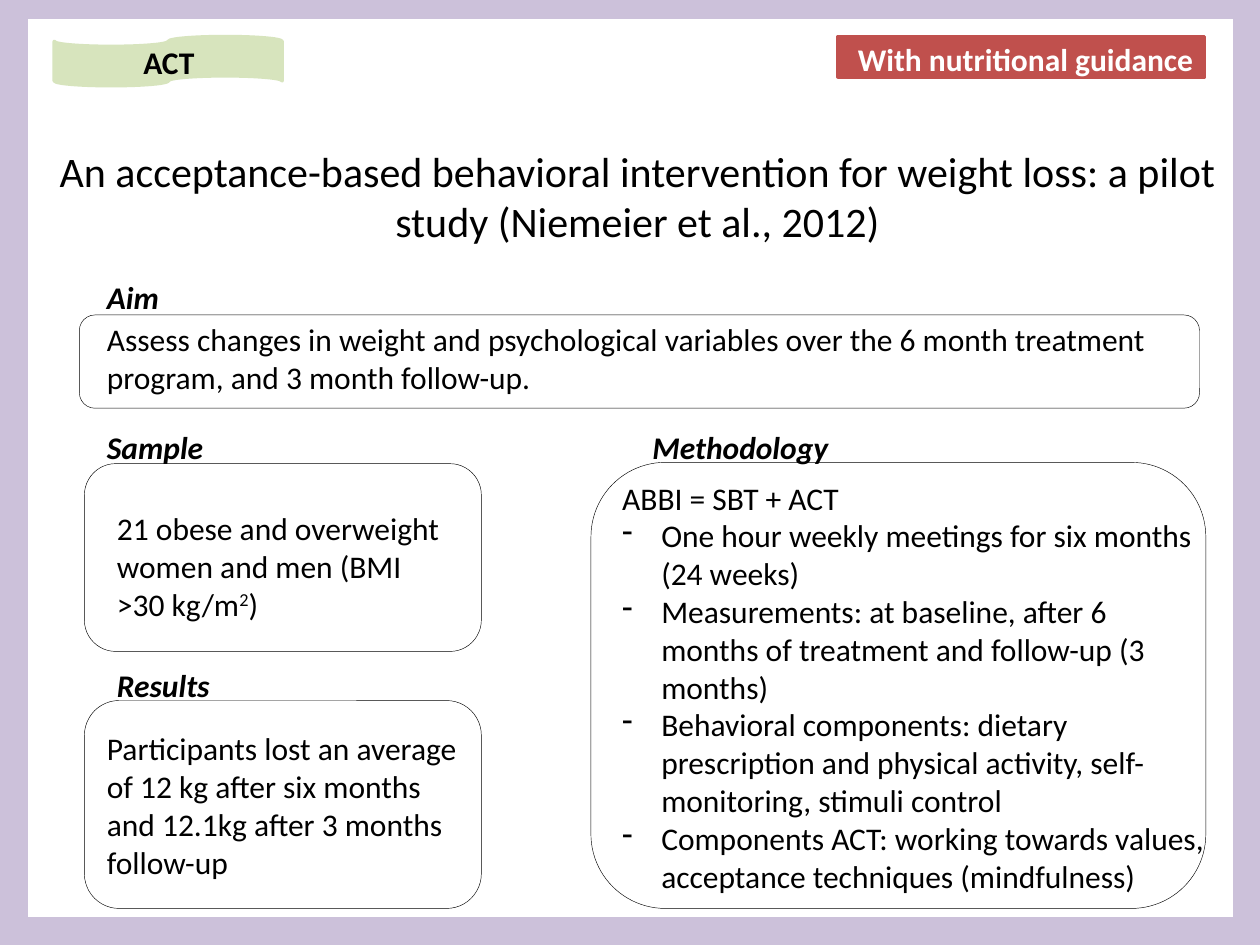
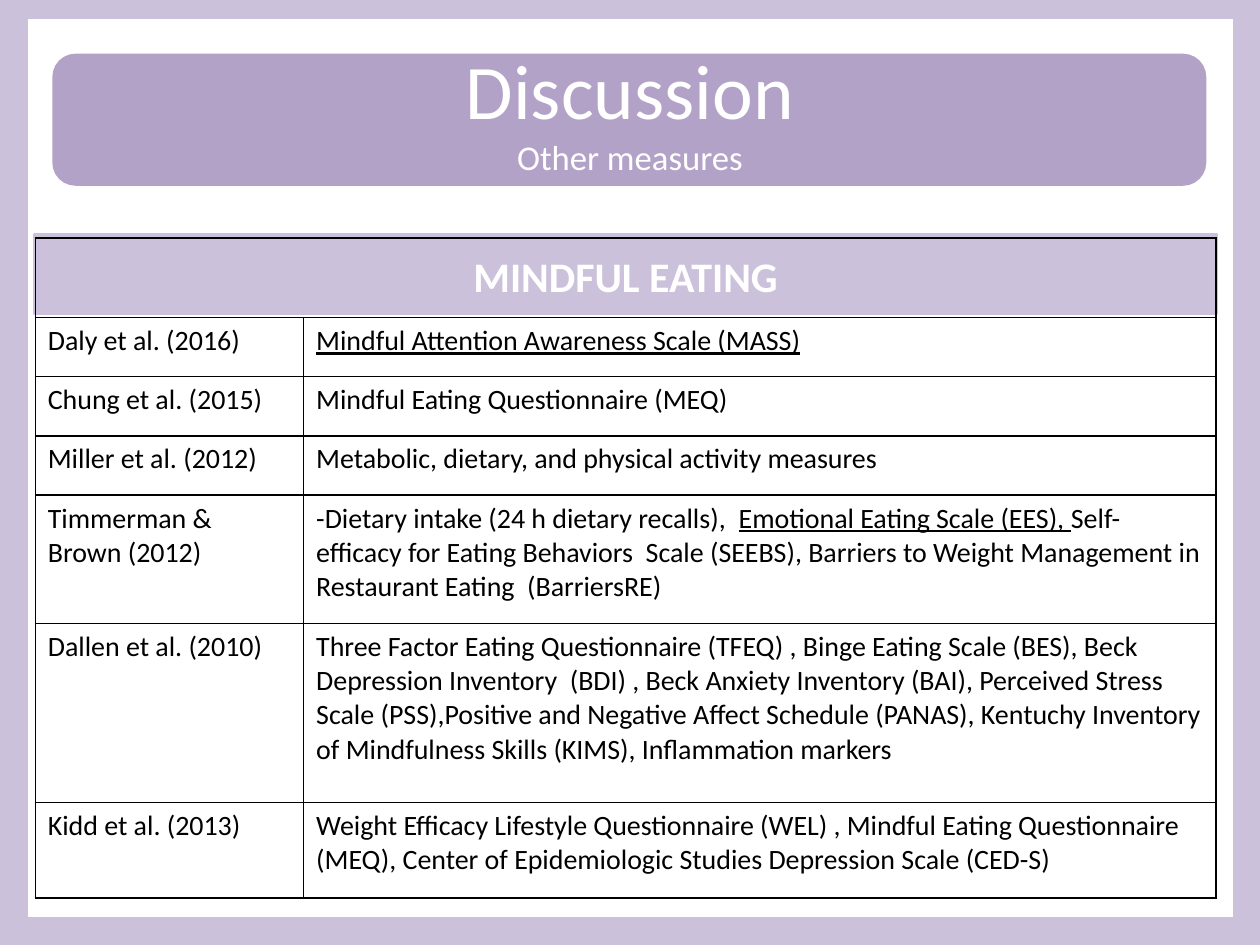
"""Build two slides on an acceptance-based weight loss study and its measures."""
from lxml import etree
from pptx import Presentation
from pptx.dml.color import RGBColor
from pptx.enum.shapes import MSO_SHAPE
from pptx.enum.text import MSO_ANCHOR, PP_ALIGN
from pptx.oxml.ns import qn
from pptx.util import Inches, Pt

BLACK = RGBColor(0x00, 0x00, 0x00)
WHITE = RGBColor(0xFF, 0xFF, 0xFF)
RED = RGBColor(0xC0, 0x50, 0x4D)
GREEN = RGBColor(0xD7, 0xE4, 0xBD)
LILAC = RGBColor(0xCC, 0xC1, 0xDA)
PURPLE = RGBColor(0xB3, 0xA2, 0xC7)
RECTANGLE = MSO_SHAPE.RECTANGLE
ROUNDED = MSO_SHAPE.ROUNDED_RECTANGLE
TAPE = MSO_SHAPE.FLOWCHART_PUNCHED_TAPE
FRAME = MSO_SHAPE.FRAME
LEFT, CENTER = PP_ALIGN.LEFT, PP_ALIGN.CENTER
TOP, MIDDLE = MSO_ANCHOR.TOP, MSO_ANCHOR.MIDDLE
FONT = "Calibri"
FRAME_BOX = (-0.98, -1.05, 11.97, 9.53)


def add_panel(slide, kind, box, color=None):
    """Add a filled shape, or a hairline outline when no colour is given."""
    shape = slide.shapes.add_shape(kind, *map(Inches, box))
    shape.shadow.inherit = False
    if color is None:
        shape.fill.background()
    else:
        shape.fill.solid()
        shape.fill.fore_color.rgb = color
    shape.line.color.rgb = BLACK if color is None else color
    shape.line.width = Pt(0.25 if color is None else 2)


def write_run(paragraph, text, size=18, color=BLACK, bold=False, italic=False, underline=False):
    """Add one formatted run to a paragraph and return it."""
    run = paragraph.add_run()
    run.text = text
    font = run.font
    font.name, font.size, font.color.rgb = FONT, Pt(size), color
    font.bold, font.italic, font.underline = bold, italic, underline
    return run


presentation = Presentation()
presentation.slide_width = Inches(10)
presentation.slide_height = Inches(7.5)
blank_layout = presentation.slide_layouts[6]

study_slide = presentation.slides.add_slide(blank_layout)
add_panel(study_slide, RECTANGLE, (6.65, 0.29, 2.91, 0.32), RED)
add_panel(study_slide, TAPE, (0.43, 0.29, 1.81, 0.39), GREEN)
add_panel(study_slide, FRAME, FRAME_BOX, LILAC)
for box in [
    (0.67, 3.68, 3.15, 1.49),
    (0.67, 5.56, 3.15, 1.65),
    (4.69, 3.67, 4.88, 3.54),
    (0.63, 2.5, 8.89, 0.74),
]:
    add_panel(study_slide, ROUNDED, box)

discussion_slide = presentation.slides.add_slide(blank_layout)
add_panel(discussion_slide, ROUNDED, (0.43, 0.44, 9.13, 1.02), PURPLE)
add_panel(discussion_slide, FRAME, FRAME_BOX, LILAC)
add_panel(discussion_slide, RECTANGLE, (0.28, 1.86, 9.37, 0.63), LILAC)

heading = {"bold": True, "italic": True}
texts = [
    (study_slide, (6.37, 0.27, 3.54, 0.4), CENTER, TOP,
     [("With nutritional guidance", {"bold": True, "color": WHITE})]),
    (study_slide, (-0.43, 0.29, 3.54, 0.4), CENTER, TOP, [("ACT", {"bold": True})]),
    (study_slide, (0.2, 0.93, 9.72, 1.25), CENTER, MIDDLE,
     [("An acceptance-based behavioral intervention for weight loss: a pilot study "
       "(Niemeier et al., 2012)", {"size": 24})]),
    (study_slide, (0.75, 2.16, 1.57, 0.4), LEFT, TOP, [("Aim", heading)]),
    (study_slide, (0.75, 3.35, 1.57, 0.4), LEFT, TOP, [("Sample", heading)]),
    (study_slide, (0.83, 5.24, 1.57, 0.4), LEFT, TOP, [("Results", heading)]),
    (study_slide, (5.08, 3.35, 1.93, 0.4), LEFT, TOP, [("Methodology", heading)]),
    (study_slide, (0.75, 2.49, 8.58, 0.71), LEFT, TOP,
     [("Assess changes in weight and psychological variables over the 6 month treatment "
       "program, and 3 month follow-up.", {})]),
    (study_slide, (0.75, 5.74, 2.99, 1.31), LEFT, TOP,
     [("Participants lost an average of 12 kg after six months and 12.1kg after 3 months "
       "follow-up", {})]),
    (discussion_slide, (0.5, 0.29, 9, 1.2), CENTER, TOP,
     [("Discussion", {"size": 44.1, "color": WHITE}),
      ("Other measures", {"size": 19.8, "color": WHITE})]),
]
for slide, box, alignment, anchor, lines in texts:
    frame = slide.shapes.add_textbox(*map(Inches, box)).text_frame
    frame.word_wrap = True
    frame.vertical_anchor = anchor
    for index, (text, style) in enumerate(lines):
        paragraph = frame.add_paragraph() if index else frame.paragraphs[0]
        paragraph.alignment = alignment
        write_run(paragraph, text, **style)

sample_box = study_slide.shapes.add_textbox(Inches(0.83), Inches(3.99), Inches(2.83), Inches(1.01))
sample_box.text_frame.word_wrap = True
sample = sample_box.text_frame.paragraphs[0]
write_run(sample, "21 obese and overweight women and men (BMI >30 kg/m")
exponent = write_run(sample, "2")
exponent.font._element.set("baseline", "30000")
write_run(sample, ")")

method_box = study_slide.shapes.add_textbox(Inches(4.84), Inches(3.75), Inches(4.84), Inches(3.43))
method_box.text_frame.word_wrap = True
write_run(method_box.text_frame.paragraphs[0], "ABBI = SBT + ACT")
for step in [
    "One hour weekly meetings for six months (24 weeks)",
    "Measurements: at baseline, after 6 months of treatment and follow-up (3 months)",
    "Behavioral components: dietary prescription and physical activity, self-monitoring, "
    "stimuli control",
    "Components ACT: working towards values, acceptance techniques (mindfulness)",
]:
    paragraph = method_box.text_frame.add_paragraph()
    properties = paragraph._p.get_or_add_pPr()
    properties.set("marL", str(Inches(0.31)))
    properties.set("indent", str(-Inches(0.31)))
    etree.SubElement(properties, qn("a:buChar")).set("char", "-")
    write_run(paragraph, step)

measures = [
    ("Daly et al. (2016)", [("Mindful Attention Awareness Scale (MASS)", True)]),
    ("Chung et al. (2015)", [("Mindful Eating Questionnaire (MEQ)", False)]),
    ("Miller et al. (2012)", [("Metabolic, dietary, and physical activity measures", False)]),
    ("Timmerman & Brown (2012)",
     [("-Dietary intake (24 h dietary recalls),  ", False),
      ("Emotional Eating Scale (EES), ", True),
      ("Self-efficacy for Eating Behaviors  Scale (SEEBS), Barriers to Weight Management in "
       "Restaurant Eating  (BarriersRE)", False)]),
    ("Dallen et al. (2010)",
     [("Three Factor Eating Questionnaire (TFEQ) , Binge Eating Scale (BES), Beck Depression "
       "Inventory  (BDI) , Beck Anxiety Inventory (BAI), Perceived Stress Scale (PSS),Positive "
       "and Negative Affect Schedule (PANAS), Kentuchy Inventory of Mindfulness Skills (KIMS), "
       "Inflammation markers", False)]),
    ("Kidd et al. (2013)",
     [("Weight Efficacy Lifestyle Questionnaire (WEL) , Mindful Eating Questionnaire (MEQ), "
       "Center of Epidemiologic Studies Depression Scale (CED-S)", False)]),
]
table = discussion_slide.shapes.add_table(
    len(measures) + 1, 2, Inches(0.28), Inches(1.89), Inches(9.37), Inches(5.24)).table
table.first_row = False
table.horz_banding = False
for column, width in zip(table.columns, (2.13, 7.24)):
    column.width = Inches(width)
for row, height in zip(table.rows, (0.63, 0.47, 0.47, 0.47, 1.02, 1.42, 0.76)):
    row.height = Inches(height)

header = table.cell(0, 0)
header.merge(table.cell(0, 1))
header.vertical_anchor = MIDDLE
header.text_frame.paragraphs[0].alignment = CENTER
write_run(header.text_frame.paragraphs[0], "MINDFUL EATING", 24, WHITE, bold=True)
for row_index, (study, runs) in enumerate(measures, start=1):
    write_run(table.cell(row_index, 0).text_frame.paragraphs[0], study, 16)
    for text, underline in runs:
        write_run(table.cell(row_index, 1).text_frame.paragraphs[0], text, 16, underline=underline)

for cell in table.iter_cells():
    cell_properties = cell._tc.get_or_add_tcPr()
    for side in ("a:lnL", "a:lnR", "a:lnT", "a:lnB"):
        border = etree.SubElement(cell_properties, qn(side), w=str(Pt(1)))
        border_fill = etree.SubElement(border, qn("a:solidFill"))
        etree.SubElement(border_fill, qn("a:srgbClr"), val=str(BLACK))
    cell.fill.background()

presentation.save("out.pptx")
